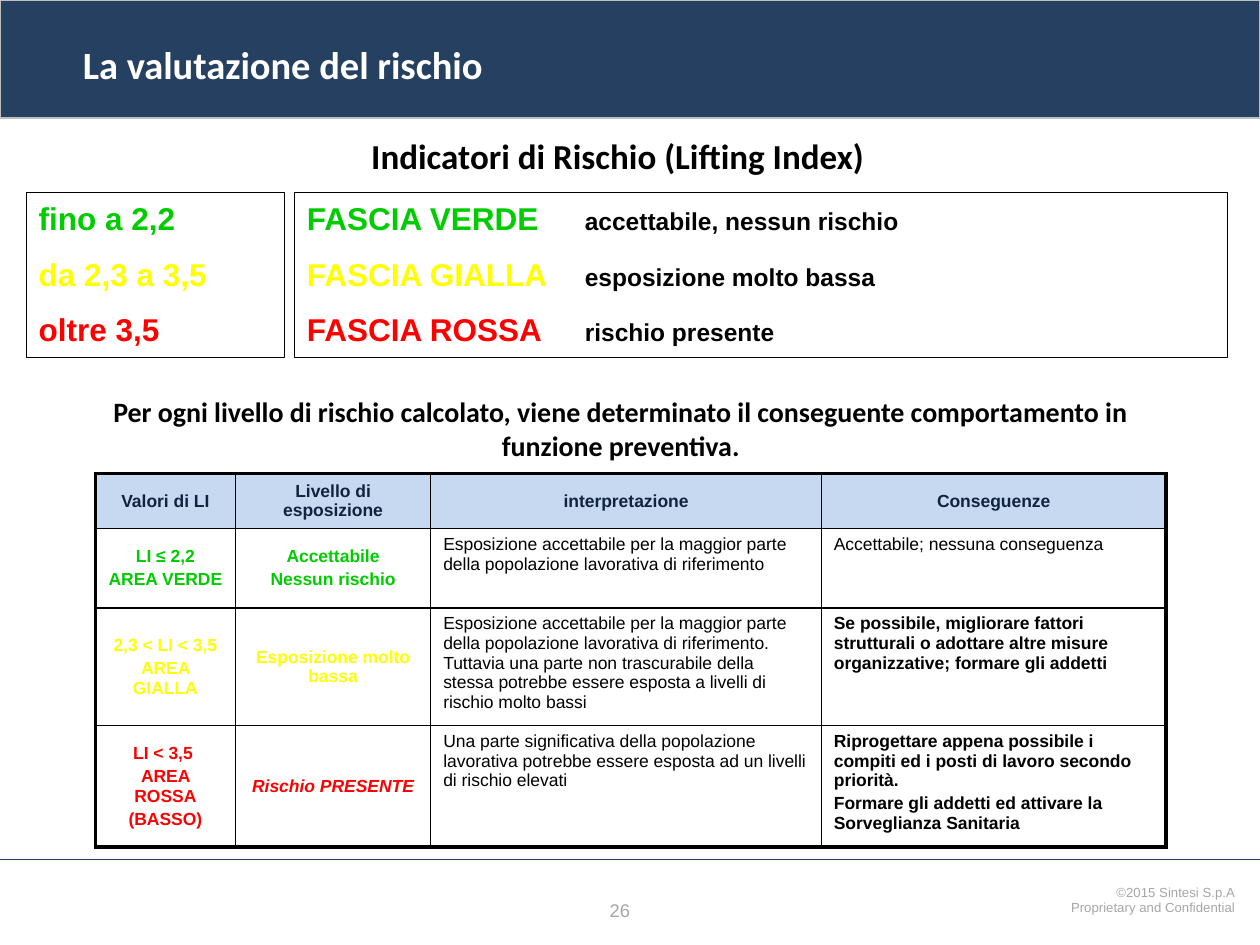
from dataclasses import dataclass, field
from typing import NamedTuple

from lxml import etree
from pptx import Presentation
from pptx.dml.color import RGBColor
from pptx.enum.shapes import MSO_CONNECTOR, MSO_SHAPE
from pptx.enum.text import MSO_ANCHOR, PP_ALIGN
from pptx.oxml.ns import qn
from pptx.util import Pt

LEFT, CENTER, RIGHT = PP_ALIGN.LEFT, PP_ALIGN.CENTER, PP_ALIGN.RIGHT
TOP, MIDDLE = MSO_ANCHOR.TOP, MSO_ANCHOR.MIDDLE
RECTANGLE, STRAIGHT = MSO_SHAPE.RECTANGLE, MSO_CONNECTOR.STRAIGHT


@dataclass(frozen=True)
class Theme:
    heading_font: str = "Calibri"
    body_font: str = "Arial"
    navy: str = "254061"
    header_text: str = "0F243E"
    header_fill: str = "C6D9F1"
    white: str = "FFFFFF"
    black: str = "000000"
    silver: str = "BFBFBF"
    grey: str = "A6A6A6"
    green: str = "00CC00"
    yellow: str = "FFFF00"
    red: str = "FF0000"
    title: float = 22
    subtitle: float = 20
    band: float = 18
    statement: float = 16
    meaning: float = 14
    page: float = 10.5
    table: float = 10
    copyright: float = 7.5


THEME = Theme()


class Box(NamedTuple):
    left: float
    top: float
    width: float
    height: float


@dataclass(frozen=True)
class Run:
    text: str
    size: float
    color: str = THEME.black
    font: str = THEME.body_font
    bold: bool = True
    italic: bool = False


@dataclass(frozen=True)
class Layout:
    align: PP_ALIGN = LEFT
    anchor: MSO_ANCHOR = TOP
    gap: float = 0
    line_spacing: float = 1.0
    tab: float = 0


class RiskBand(NamedTuple):
    limit: str
    name: str
    meaning: str
    color: str


@dataclass(frozen=True)
class TableCell:
    lines: list[str]
    color: str = THEME.black
    bold: bool = True
    italic: bool = False
    layout: Layout = field(default_factory=lambda: Layout(gap=2))
    fill: str = ""


BANDS = [
    RiskBand("fino a 2,2", "FASCIA VERDE", "accettabile, nessun rischio", THEME.green),
    RiskBand("da 2,3 a 3,5", "FASCIA GIALLA", "esposizione molto bassa", THEME.yellow),
    RiskBand("oltre 3,5", "FASCIA ROSSA", "rischio presente", THEME.red),
]
CENTERED = Layout(CENTER, MIDDLE, gap=2)
COLUMN_WIDTHS = [80, 111.6, 223.2, 197]
ROW_HEIGHTS = [31, 45.4, 67, 65]


def level(*lines: str, color: str, italic: bool = False) -> TableCell:
    return TableCell(list(lines), color, italic=italic, layout=CENTERED)


def plain(text: str) -> TableCell:
    return TableCell([text], bold=False)


HEADERS = ["Valori di LI", "Livello di esposizione", "interpretazione", "Conseguenze"]
TABLE_ROWS = [
    [TableCell([header], THEME.header_text, layout=CENTERED, fill=THEME.header_fill)
     for header in HEADERS],
    [level("LI ≤ 2,2", "AREA VERDE", color=THEME.green),
     level("Accettabile", "Nessun rischio", color=THEME.green),
     plain("Esposizione accettabile per la maggior parte della popolazione lavorativa "
           "di riferimento"),
     plain("Accettabile; nessuna conseguenza")],
    [level("2,3 < LI < 3,5", "AREA GIALLA", color=THEME.yellow),
     level("Esposizione molto bassa", color=THEME.yellow),
     plain("Esposizione accettabile per la maggior parte della popolazione lavorativa "
           "di riferimento. Tuttavia una parte non trascurabile della stessa potrebbe "
           "essere esposta a livelli di rischio molto bassi"),
     TableCell(["Se possibile, migliorare fattori strutturali o adottare altre misure "
                "organizzative; formare gli addetti"])],
    [level("LI < 3,5 ", "AREA ROSSA", "(BASSO)", color=THEME.red),
     level("Rischio PRESENTE", color=THEME.red, italic=True),
     plain("Una parte significativa della popolazione lavorativa potrebbe essere esposta "
           "ad un livelli di rischio elevati"),
     TableCell(["Riprogettare appena possibile i compiti ed i posti di lavoro secondo "
                "priorità.",
                "Formare gli addetti ed attivare la Sorveglianza Sanitaria"])],
]


def write(frame, paragraphs: list[list[Run]], layout: Layout) -> None:
    frame.word_wrap = True
    frame.vertical_anchor = layout.anchor
    for index, runs in enumerate(paragraphs):
        paragraph = frame.paragraphs[0] if index == 0 else frame.add_paragraph()
        formats = {"alignment": layout.align, "line_spacing": layout.line_spacing,
                   "space_before": Pt(layout.gap if index else 0)}
        for name, value in formats.items():
            setattr(paragraph, name, value)
        if layout.tab:
            tabs = etree.SubElement(paragraph._p.get_or_add_pPr(), qn("a:tabLst"))
            etree.SubElement(tabs, qn("a:tab"), pos=str(Pt(layout.tab)), algn="l")
        for part in runs:
            run = paragraph.add_run()
            run.text = part.text
            run.font.color.rgb = RGBColor.from_string(part.color)
            formats = {"name": part.font, "size": Pt(part.size),
                       "bold": part.bold, "italic": part.italic}
            for name, value in formats.items():
                setattr(run.font, name, value)


def add_text(slide, box: Box, paragraphs: list[list[Run]], layout: Layout) -> None:
    text_box = slide.shapes.add_textbox(*map(Pt, box))
    write(text_box.text_frame, paragraphs, layout)


def add_rectangle(slide, box: Box, line: str, fill: str = ""):
    rectangle = slide.shapes.add_shape(RECTANGLE, *map(Pt, box))
    rectangle.shadow.inherit = False
    paint(rectangle.fill, fill)
    rectangle.line.color.rgb = RGBColor.from_string(line)
    rectangle.line.width = Pt(0.75)
    return rectangle


def paint(fill, color: str) -> None:
    """Fill with the colour, or leave transparent when it is empty."""
    if color:
        fill.solid()
        fill.fore_color.rgb = RGBColor.from_string(color)
    else:
        fill.background()


def add_rule(slide, y: float, width: float) -> None:
    rule = slide.shapes.add_connector(STRAIGHT, Pt(0), Pt(y), Pt(width), Pt(y))
    rule.line.color.rgb = RGBColor.from_string(THEME.navy)
    rule.line.width = Pt(0.5)
    etree.SubElement(rule._element.spPr, qn("a:effectLst"))


def set_borders(cell, outer_sides: dict[str, bool]) -> None:
    """Draw thick lines on the table's outer sides and thin ones elsewhere."""
    properties = cell._tc.get_or_add_tcPr()
    for side, is_outer in outer_sides.items():
        width = Pt(2.25 if is_outer else 1)
        line = etree.SubElement(properties, qn(f"a:ln{side}"), w=str(width))
        solid = etree.SubElement(line, qn("a:solidFill"))
        etree.SubElement(solid, qn("a:srgbClr"), val=THEME.black)


def add_risk_table(slide, left: float, top: float) -> None:
    last_row, last_column = len(ROW_HEIGHTS) - 1, len(COLUMN_WIDTHS) - 1
    box = Box(left, top, sum(COLUMN_WIDTHS), sum(ROW_HEIGHTS))
    table = slide.shapes.add_table(last_row + 1, last_column + 1, *map(Pt, box)).table
    table.first_row = table.horz_banding = False
    for column, width in zip(table.columns, COLUMN_WIDTHS):
        column.width = Pt(width)
    for r, (height, contents) in enumerate(zip(ROW_HEIGHTS, TABLE_ROWS)):
        table.rows[r].height = Pt(height)
        for c, content in enumerate(contents):
            cell = table.cell(r, c)
            runs = [[Run(line, THEME.table, content.color, bold=content.bold,
                         italic=content.italic)] for line in content.lines]
            write(cell.text_frame, runs, content.layout)
            cell.vertical_anchor = content.layout.anchor
            set_borders(cell, {"L": c == 0, "R": c == last_column,
                               "T": r == 0, "B": r == last_row})
            paint(cell.fill, content.fill)


def main() -> None:
    presentation = Presentation()
    presentation.slide_width, presentation.slide_height = Pt(720), Pt(540)
    slide = presentation.slides.add_slide(presentation.slide_layouts[6])

    add_text(slide, Box(341.3, 510.5, 37.4, 20),
             [[Run("26", THEME.page, THEME.grey, bold=False)]], Layout())
    add_text(slide, Box(521.3, 502.6, 191.5, 24.5),
             [[Run(line, THEME.copyright, THEME.grey, bold=False)]
              for line in ("©2015 Sintesi S.p.A", "Proprietary and Confidential")],
             Layout(RIGHT, line_spacing=0.95))
    add_rectangle(slide, Box(0, 0, 720, 67.5), THEME.silver, THEME.navy)
    add_rule(slide, 491, 720)

    for text, box, size, color, layout in (
        ("La valutazione del rischio", Box(40.3, 13.7, 620.6, 46), THEME.title,
         THEME.white, Layout(anchor=MIDDLE)),
        ("Per ogni livello di rischio calcolato, viene determinato il conseguente "
         "comportamento in funzione preventiva.", Box(31.5, 222, 646.5, 46),
         THEME.statement, THEME.black, Layout(CENTER)),
        ("Indicatori di Rischio (Lifting Index) ", Box(25.2, 73.4, 660.2, 31.7),
         THEME.subtitle, THEME.black, Layout(CENTER)),
    ):
        add_text(slide, box, [[Run(text, size, color, THEME.heading_font)]], layout)

    add_risk_table(slide, 54.5, 270.7)

    limits = [[Run(band.limit, THEME.band, band.color)] for band in BANDS]
    meanings = [[Run(f"{band.name}\t", THEME.band, band.color),
                 Run(band.meaning, THEME.meaning)] for band in BANDS]
    for left, width, paragraphs, tab in ((15, 147.6, limits, 0),
                                         (168.3, 533, meanings, 158.8)):
        panel = add_rectangle(slide, Box(left, 110, width, 94.3), THEME.black)
        write(panel.text_frame, paragraphs, Layout(gap=10.3, tab=tab))

    presentation.save("out.pptx")


if __name__ == "__main__":
    main()
